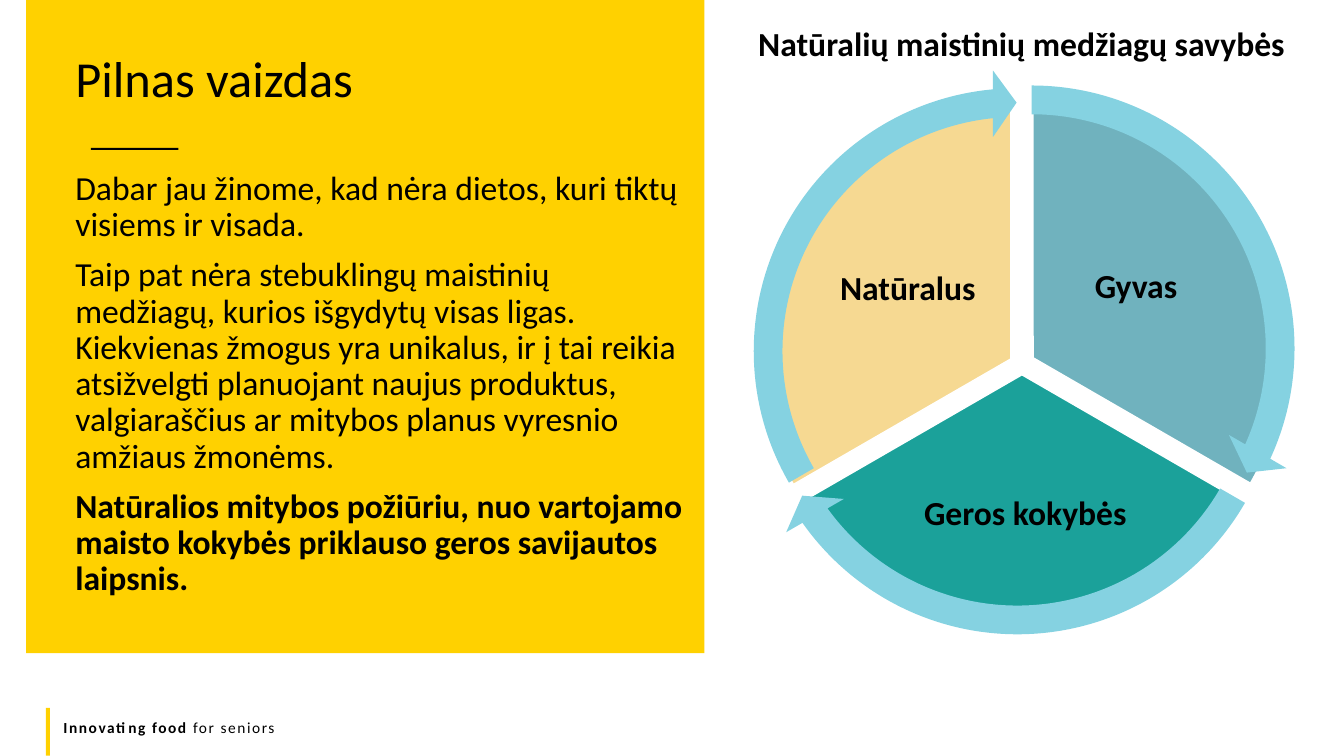
from dataclasses import dataclass

from pptx import Presentation
from pptx.dml.color import RGBColor
from pptx.enum import shapes, text
from pptx.util import Cm, Pt


@dataclass(frozen=True)
class Theme:
    font: str = "Calibri"
    ink: str = "000000"
    paper: str = "FFFFFF"
    accent: str = "FFD100"
    arrow: str = "85D2E1"
    title: int = 36
    body: int = 24
    footer: int = 11


THEME = Theme()
MSO = shapes.MSO_SHAPE
CENTER = text.PP_ALIGN.CENTER

PIE_SIZE = 12.65
ARROW_SIZE = 14.2

# label, colour, pie corner, pie angles, label box, arrow corner, arrow end and start
SECTORS = [
    ("Gyvas", "70B2BE", (19.71, 2.69), (162, 18),
     (26.37, 5.36, 4.52, 3.76), (18.9, 1.68), (14.72, 161.99)),
    ("Geros kokybės", "1BA19A", (19.43, 3.12), (18, 90),
     (22.45, 11.33, 6.78, 3.3), (18.54, 2.26), (86.72, 18)),
    ("Natūralus", "F6D992", (19.15, 2.72), (90, 162),
     (20.62, 5.41, 4.52, 3.76), (18.52, 1.75), (158.73, 90)),
]

BODY = [
    [("Dabar jau žinome, kad nėra dietos, kuri tiktų visiems ir visada.", False)],
    [("Taip pat nėra stebuklingų maistinių medžiagų, kurios išgydytų visas ligas. "
      "Kiekvienas žmogus yra unikalus, ir į tai reikia atsižvelgti planuojant naujus "
      "produktus, valgiaraščius ar mitybos planus vyresnio amžiaus žmonėms.", False)],
    [("Natūralios mitybos požiūriu, nuo vartojamo maisto kokybės priklauso geros "
      "savijautos laipsnis.", True)],
]


def add_text(s, box, paragraphs, size=THEME.body, align=None, spacing=None,
             before=0, middle=False, inset=None, tracking=None):
    """Add a text box; each paragraph is a list of (text, bold) runs."""
    tf = s.shapes.add_textbox(*map(Cm, box)).text_frame
    tf.word_wrap = True
    if middle:
        tf.vertical_anchor = text.MSO_ANCHOR.MIDDLE
    if inset is not None:
        tf.margin_left = tf.margin_right = tf.margin_top = tf.margin_bottom = Cm(inset)
    for i, runs in enumerate(paragraphs):
        p = tf.add_paragraph() if i else tf.paragraphs[0]
        p.alignment = align
        p.line_spacing = spacing
        p.space_before = Pt(before if i else 0)
        for words, bold in runs:
            r = p.add_run()
            r.text = words
            r.font.name, r.font.size, r.font.bold = THEME.font, Pt(size), bold
            r.font.color.rgb = RGBColor.from_string(THEME.ink)
            if tracking:
                r.font._element.set("spc", str(tracking))


def add_filled(s, kind, box, fill, adjustments=(), line=None):
    sp = s.shapes.add_shape(kind, *map(Cm, box))
    sp.shadow.inherit = False
    sp.fill.solid()
    sp.fill.fore_color.rgb = RGBColor.from_string(fill)
    if line:
        sp.line.color.rgb = RGBColor.from_string(line)
        sp.line.width = Pt(1)
    else:
        sp.line.fill.background()
    for i, value in enumerate(adjustments):
        sp.adjustments[i] = value


def add_cycle(s):
    for label, colour, corner, angles, label_box, _, _ in SECTORS:
        add_filled(s, MSO.PIE, (*corner, PIE_SIZE, PIE_SIZE), colour, angles, THEME.paper)
        add_text(s, label_box, [[(label, True)]], align=CENTER, spacing=0.9,
                 middle=True, inset=0.08)
    for *_, corner, (end, start) in SECTORS:
        add_filled(s, MSO.CIRCULAR_ARROW, (*corner, ARROW_SIZE, ARROW_SIZE), THEME.arrow,
                   (0.051, 3.275, end, start, 0.059))


def main():
    prs = Presentation()
    prs.slide_width, prs.slide_height = Cm(33.87), Cm(19.05)
    s = prs.slides.add_slide(prs.slide_layouts[6])

    add_filled(s, MSO.RECTANGLE, (0.66, 0, 17.09, 16.46), THEME.accent)
    add_filled(s, MSO.RECTANGLE, (2.29, 3.73, 2.21, 0.05), THEME.ink)
    add_text(s, (1.35, 17.96, 30.48, 0.74),
             [[("Innovating food ", True), ("for seniors", False)]],
             size=THEME.footer, tracking=110)
    add_filled(s, MSO.RECTANGLE, (1.16, 17.84, 0.1, 1.2), THEME.accent)

    add_text(s, (1.65, 4.19, 15.9, 11.43), BODY, spacing=0.9, before=10)
    add_text(s, (1.65, 1.35, 14.12, 1.63), [[("Pilnas vaizdas", False)]],
             size=THEME.title, spacing=0.8)
    add_cycle(s)
    add_text(s, (18.39, 0.46, 14.71, 1.27),
             [[("Natūralių maistinių medžiagų savybės", True)]], align=CENTER)

    prs.save("out.pptx")


if __name__ == "__main__":
    main()
